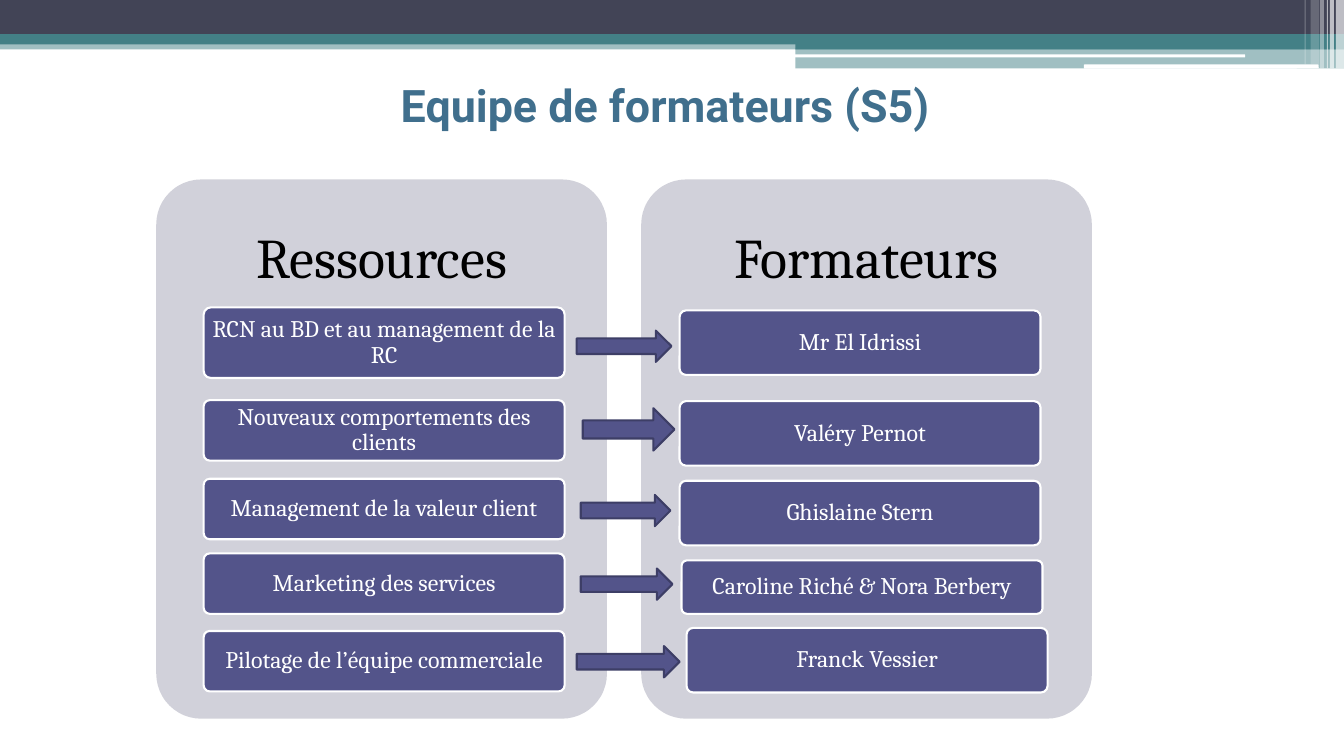
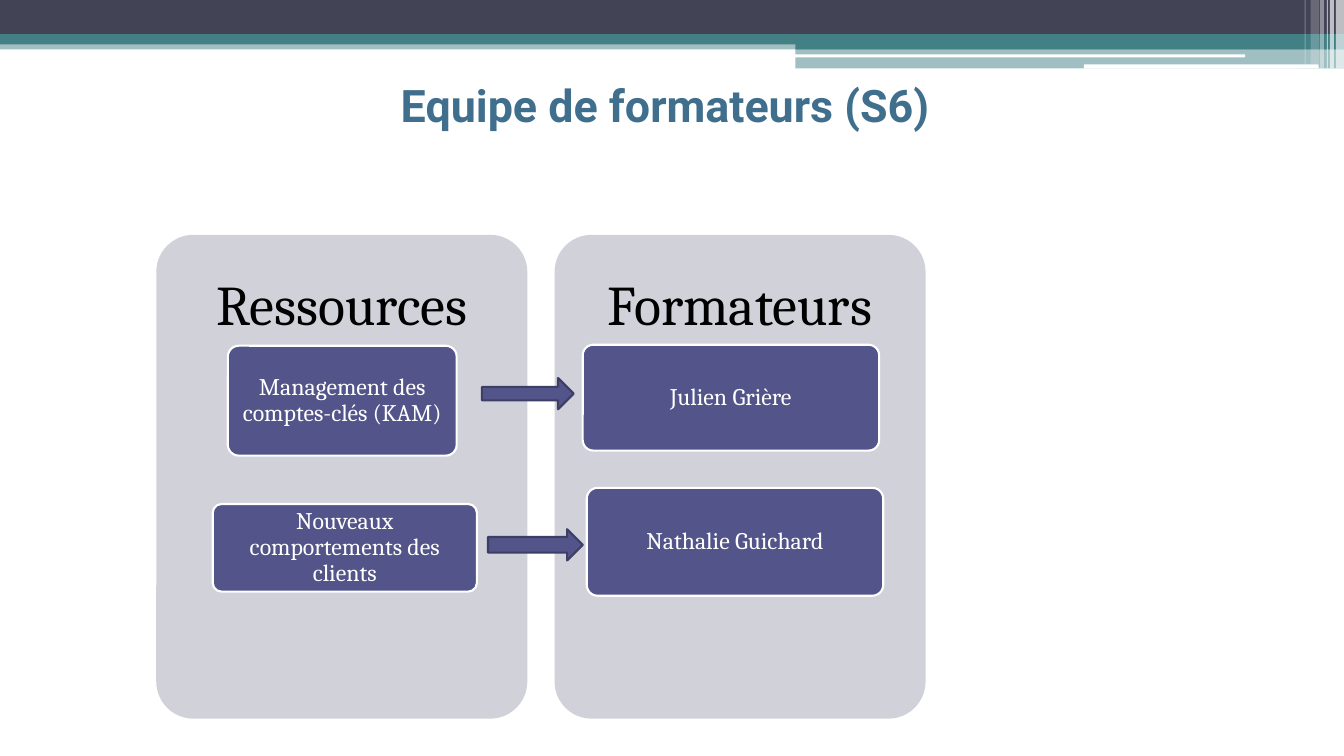
from lxml.etree import SubElement
from pptx import Presentation
from pptx.dml.color import RGBColor
from pptx.enum.shapes import MSO_SHAPE
from pptx.enum.text import MSO_ANCHOR, PP_ALIGN
from pptx.oxml.ns import qn
from pptx.util import Pt

PX = 9144  # EMU per px, 100 px to the inch
RECT, ROUND, ARROW = MSO_SHAPE.RECTANGLE, MSO_SHAPE.ROUNDED_RECTANGLE, MSO_SHAPE.RIGHT_ARROW
MIDDLE, CENTER = MSO_ANCHOR.MIDDLE, PP_ALIGN.CENTER
TITLE_ONLY = 5

COLORS = {
    "navy": "424456", "teal": "438086", "white": "FFFFFF", "black": "000000",
    "title": "406F8D", "panel": "D1D1DA", "node": "53548A", "arrow_line": "3D3E66",
}
FONTS = {
    "title": {"name": "Roboto", "size": Pt(32), "bold": True},
    "heading": {"name": "Cambria", "size": Pt(40)},
    "node": {"name": "Cambria", "size": Pt(17)},
}
HEADINGS = ("Ressources", "Formateurs")
TITLE_BOX = (76, 44, 1156, 120)

# preset, box, colour, opacity in percent
BANDS = [
    (RECT, (0, 40, 1333, 9), "teal", 50),
    (RECT, (0, 0, 1333, 34), "navy", 100),
    (RECT, (0, 34, 1333, 10), "teal", 100),
    (RECT, (789, 39, 544, 10), "teal", 100),
    (RECT, (789, 48, 544, 20), "teal", 50),
    (ROUND, (788, 54, 447, 3), "white", 100),
    (ROUND, (1075, 64, 233, 4), "white", 100),
    (RECT, (1325, 0, 8, 68), "white", 65),
    (RECT, (1319, 0, 4, 68), "white", 65),
    (RECT, (1316, 0, 1, 68), "white", 60),
    (RECT, (1309, 0, 4, 68), "white", 40),
    (RECT, (1300, 0, 8, 64), "white", 20),
    (RECT, (1294, 0, 1, 64), "white", 30),
]

# panel: left, top, width, height, gap; rows: resource, trainer, arrow box, shaft share
TEAMS = [
    {
        "title": "Equipe de formateurs (S5)",
        "panel": (155, 178, 447, 535, 34),
        "rows": [
            (("RCN au BD et au management de la RC", (202, 305, 358, 70)),
             ("Mr El Idrissi", (674, 308, 358, 64)), (572, 328, 94, 31), 0.5),
            (("Nouveaux comportements des clients", (202, 397, 358, 60)),
             ("Valéry Pernot", (674, 398, 358, 64)), (578, 405, 91, 42), 0.43),
            (("Management de la valeur client", (202, 475, 358, 60)),
             ("Ghislaine Stern", (674, 477, 358, 64)), (576, 491, 89, 31), 0.5),
            (("Marketing des services", (202, 549, 358, 60)),
             ("Caroline Riché & Nora Berbery", (676, 556, 358, 53)), (576, 564, 91, 31), 0.5),
            (("Pilotage de l’équipe commerciale", (202, 626, 358, 60)),
             ("Franck Vessier", (681, 623, 358, 64)), (572, 641, 102, 31), 0.5),
        ],
    },
    {
        "title": "Equipe de formateurs (S6)",
        "panel": (155, 233, 368, 480, 27),
        "rows": [
            (("Management des comptes-clés (KAM)", (226, 343, 227, 109)),
             ("Julien Grière", (578, 342, 294, 105)), (478, 375, 91, 31), 0.43),
            (("Nouveaux comportements des clients", (211, 500, 262, 87)),
             ("Nathalie Guichard", (582, 484, 294, 107)), (484, 525, 94, 31), 0.5),
        ],
    },
]


def rgb(color):
    return RGBColor.from_string(COLORS[color])


def add_block(slide, preset, box, fill, line=None):
    block = slide.shapes.add_shape(preset, *(v * PX for v in box))
    block.shadow.inherit = False
    block.fill.solid()
    block.fill.fore_color.rgb = rgb(fill)
    if line:
        block.line.color.rgb = rgb(line)
        block.line.width = Pt(1.5)
    else:
        block.line.fill.background()
    return block


def style_text(frame, text, font, color, **paragraph_format):
    frame.text = text
    frame.word_wrap = True
    frame.vertical_anchor = MIDDLE
    paragraph = frame.paragraphs[0]
    paragraph.alignment = CENTER
    for target, values in ((paragraph, paragraph_format), (paragraph.runs[0].font, FONTS[font])):
        for key, value in values.items():
            setattr(target, key, value)
    paragraph.runs[0].font.color.rgb = rgb(color)
    return paragraph


def set_insets(frame, left, top, right, bottom):
    for side, inset in zip(("left", "top", "right", "bottom"), (left, top, right, bottom)):
        setattr(frame, f"margin_{side}", inset * PX)


def move_bands_to_layout(slide, layout):
    """Draw the bands on a slide, then hand them to its layout so all slides share them."""
    for number, (preset, box, color, opacity) in enumerate(BANDS, start=100):
        band = add_block(slide, preset, box, color)
        if opacity < 100:
            fill_color = next(band.element.iter(qn("a:srgbClr")))
            SubElement(fill_color, qn("a:alpha")).set("val", str(opacity * 1000))
        band.element.nvSpPr.cNvPr.set("id", str(number))
        layout.shapes.element.append(band.element)


def add_title(slide, text):
    paragraph = style_text(slide.shapes.title.text_frame, text, "title", "title",
                           space_before=Pt(3))
    properties = paragraph._p.get_or_add_pPr()
    properties.set("marL", str(40 * PX))
    properties.set("indent", str(-28 * PX))


def add_panels(slide, left, top, width, height, gap):
    """Two panels, each with its heading centred in the top 30 % of its height."""
    for column, heading in enumerate(HEADINGS):
        box = (left + column * (width + gap), top, width, height)
        panel = add_block(slide, ROUND, box, "panel")
        panel.adjustments[0] = 0.1
        style_text(panel.text_frame, heading, "heading", "black", line_spacing=0.9)
        set_insets(panel.text_frame, 17, 17, 17, 17 + round(height * 0.7))


def add_node(slide, text, box):
    node = add_block(slide, ROUND, box, "node", "white")
    node.adjustments[0] = 0.1
    style_text(node.text_frame, text, "node", "white", line_spacing=0.9)
    set_insets(node.text_frame, 5, 4, 5, 4)


def main():
    deck = Presentation()
    deck.slide_width, deck.slide_height = 1333 * PX, 750 * PX
    layout = deck.slide_layouts[TITLE_ONLY]
    title_holder = layout.placeholders[0]
    for side, value in zip(("left", "top", "width", "height"), TITLE_BOX):
        setattr(title_holder, side, value * PX)

    for team in TEAMS:
        slide = deck.slides.add_slide(layout)
        if len(deck.slides) == 1:
            move_bands_to_layout(slide, layout)
        add_title(slide, team["title"])
        add_panels(slide, *team["panel"])
        for resource, trainer, arrow_box, shaft in team["rows"]:
            add_node(slide, *resource)
            add_node(slide, *trainer)
            arrow = add_block(slide, ARROW, arrow_box, "node", "arrow_line")
            arrow.adjustments[0] = shaft
    deck.save("out.pptx")


if __name__ == "__main__":
    main()
